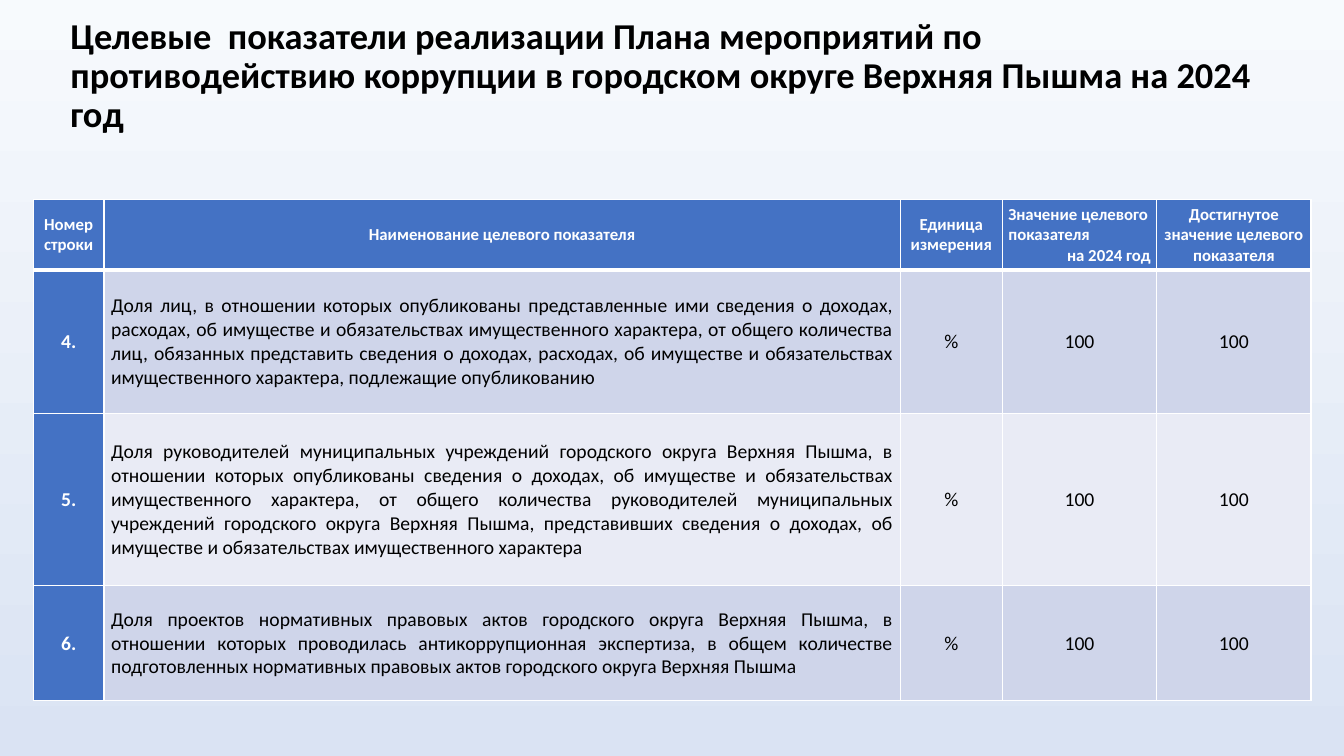
import pptx
import pptx.dml.color
import pptx.enum.text
import pptx.oxml
import pptx.oxml.ns
import pptx.util
from pptx.util import Cm

ALIGN = pptx.enum.text.PP_ALIGN
MIDDLE = pptx.enum.text.MSO_ANCHOR.MIDDLE
BLACK, WHITE, BLUE = "000000", "FFFFFF", "4472C4"
BANDS = ["CFD5EA", "E9EBF5"]


def color(code):
    return pptx.dml.color.RGBColor.from_string(code)


class Page:
    """Holds the style and the current slide."""

    font = "Calibri"

    def __init__(self, deck):
        self.slide = deck.slides.add_slide(deck.slide_layouts[5])

    def shade(self, top, end):
        fill = self.slide.background.fill
        fill.gradient()
        fill.gradient_angle = 270
        for stop, code in zip(fill.gradient_stops, (top, end)):
            stop.color.rgb = color(code)

    def style(self, par, size, code, bold, align):
        par.alignment = align
        for run in par.runs:
            run.font.name = self.font
            run.font.size = pptx.util.Pt(size)
            run.font.bold = bold
            run.font.color.rgb = color(code)

    def title(self, text, left, top, width, height):
        box = self.slide.shapes.title
        box.left, box.top, box.width, box.height = map(Cm, (left, top, width, height))
        frame = box.text_frame
        frame.text = text
        frame.word_wrap = True
        frame.auto_size = pptx.enum.text.MSO_AUTO_SIZE.NONE
        frame.vertical_anchor = MIDDLE
        par = frame.paragraphs[0]
        par.line_spacing = 0.9
        par.space_before = pptx.util.Pt(0)
        self.style(par, 26, BLACK, True, ALIGN.LEFT)

    def table(self, left, top, cols, rows):
        grid = self.slide.shapes.add_table(
            len(rows), len(cols), Cm(left), Cm(top), Cm(sum(cols)), Cm(sum(rows))).table
        for col, width in zip(grid.columns, cols):
            col.width = Cm(width)
        for row, height in zip(grid.rows, rows):
            row.height = Cm(height)
        return grid

    def cell(self, cell, text, fill, size, code, bold, aligns, pad):
        cell.text = text
        cell.vertical_anchor = MIDDLE
        cell.margin_left = cell.margin_right = Cm(pad)
        cell.margin_top = cell.margin_bottom = 0
        cell.fill.solid()
        cell.fill.fore_color.rgb = color(fill)
        for par, align in zip(cell.text_frame.paragraphs, aligns):
            self.style(par, size, code, bold, align)

    def border(self, cell, top, bottom):
        props = cell._tc.get_or_add_tcPr()
        sides = {"L": 1, "R": 1, "T": top, "B": bottom}
        for spot, (side, width) in enumerate(sides.items()):
            props.insert(spot, pptx.oxml.parse_xml(
                f'<a:ln{side} {pptx.oxml.ns.nsdecls("a")} w="{pptx.util.Pt(width)}">'
                f'<a:solidFill><a:srgbClr val="{WHITE}"/></a:solidFill></a:ln{side}>'))


HEADS = [
    "Номер строки",
    "Наименование целевого показателя",
    "Единица измерения",
    "Значение целевого показателя\nна 2024 год",
    "Достигнутое значение целевого показателя",
]
GOALS = [
    ("4.", "Доля лиц, в отношении которых опубликованы представленные ими сведения о доходах, "
     "расходах, об имуществе и обязательствах имущественного характера, от общего количества "
     "лиц, обязанных представить сведения о доходах, расходах, об имуществе и обязательствах "
     "имущественного характера, подлежащие опубликованию", "%", "100", "100"),
    ("5.", "Доля руководителей муниципальных учреждений городского округа Верхняя Пышма, в "
     "отношении которых опубликованы сведения о доходах, об имуществе и обязательствах "
     "имущественного характера, от общего количества руководителей муниципальных "
     "учреждений городского округа Верхняя Пышма, представивших сведения о доходах, об "
     "имуществе и обязательствах имущественного характера", "%", "100", "100"),
    ("6.", "Доля проектов нормативных правовых актов городского округа Верхняя Пышма, в "
     "отношении которых проводилась антикоррупционная экспертиза, в общем количестве "
     "подготовленных нормативных правовых актов городского округа Верхняя Пышма",
     "%", "100", "100"),
]


def main():
    deck = pptx.Presentation()
    deck.slide_width, deck.slide_height = Cm(33.87), Cm(19.05)
    page = Page(deck)

    # Background and title
    page.shade("F7FAFD", "DAE3F3")
    page.title("Целевые  показатели реализации Плана мероприятий по противодействию "
               "коррупции в городском округе Верхняя Пышма на 2024 год",
               1.52, 0.61, 30.6, 2.64)

    # Table header
    grid = page.table(0.84, 5.03, [1.78, 20.07, 2.57, 3.89, 3.89], [1.78, 3.61, 4.34, 2.9])
    for col, text in enumerate(HEADS):
        aligns = [ALIGN.LEFT, ALIGN.RIGHT] if "\n" in text else [ALIGN.CENTER]
        cell = grid.cell(0, col)
        page.cell(cell, text, BLUE, 12, WHITE, True, aligns, 0.15)
        page.border(cell, 1, 3)

    # Table body
    for row, goal in enumerate(GOALS, 1):
        for col, text in enumerate(goal):
            first = col == 0
            fill = BLUE if first else BANDS[(row - 1) % 2]
            align = ALIGN.JUSTIFY if col == 1 else ALIGN.CENTER
            cell = grid.cell(row, col)
            page.cell(cell, text, fill, 14, WHITE if first else BLACK, first, [align], 0.18)
            page.border(cell, 3 if row == 1 else 1, 1)

    deck.save("out.pptx")


if __name__ == "__main__":
    main()
